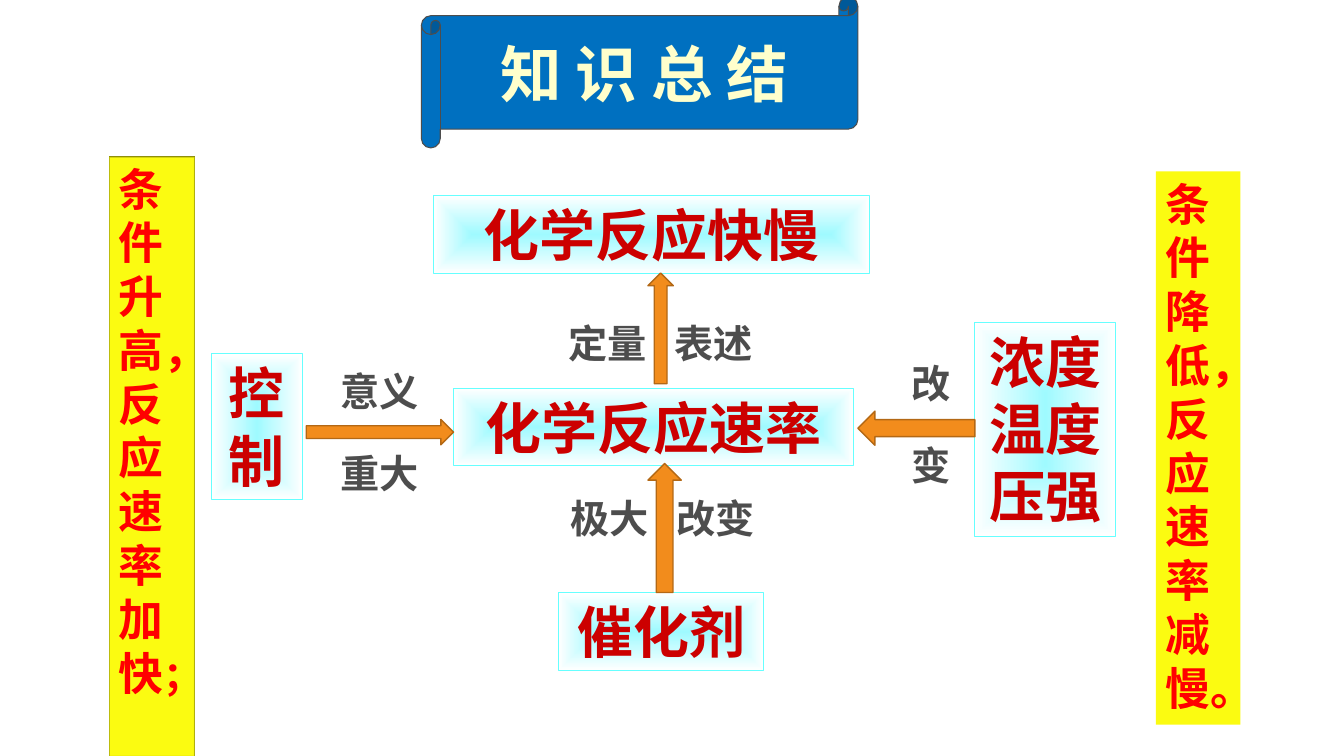
from dataclasses import dataclass
from typing import Optional

from lxml import etree
from pptx import Presentation
from pptx.dml.color import RGBColor
from pptx.enum import shapes, text
from pptx.oxml import ns
from pptx.util import Cm, Pt

FONT = "Noto Sans CJK SC"
BLUE = RGBColor(0x00, 0x70, 0xC0)
CREAM = RGBColor(0xFF, 0xFF, 0xCC)
GREY = RGBColor(0x4D, 0x4D, 0x4D)
AQUA = RGBColor(0x9F, 0xFA, 0xFF)
AQUA_EDGE = RGBColor(0x66, 0xFF, 0xFF)
WHITE = RGBColor(0xFF, 0xFF, 0xFF)
DARK_RED = RGBColor(0xCC, 0x00, 0x00)
RED = RGBColor(0xFF, 0x00, 0x00)
YELLOW = RGBColor(0xFB, 0xFB, 0x11)
OLIVE = RGBColor(0x83, 0x83, 0x09)
ORANGE = RGBColor(0xF2, 0x8C, 0x1C)
BROWN = RGBColor(0xB3, 0x68, 0x15)
PRESET = shapes.MSO_SHAPE
ALIGN = text.PP_ALIGN


@dataclass
class Frame:
    left: float
    top: float
    width: float
    height: float

    def lengths(self):
        return [Cm(value) for value in (self.left, self.top, self.width, self.height)]


@dataclass
class Style:
    size: float
    color: RGBColor
    align: text.PP_ALIGN = ALIGN.LEFT
    space_before: float = 0


@dataclass
class Gradient:
    inner: RGBColor
    outer: RGBColor
    inner_position: float = 0


@dataclass
class Concept:
    frame: Frame
    lines: list[str]


@dataclass
class Arrow:
    preset: shapes.MSO_SHAPE
    frame: Frame


@dataclass
class Condition:
    frame: Frame
    runs: list[tuple[str, float]]
    fill: RGBColor | Gradient


TITLE = Style(44, CREAM, ALIGN.CENTER)
CONCEPT = Style(40, DARK_RED, ALIGN.CENTER)
LABEL = Style(28, GREY, space_before=25)
CONDITION = Style(32, RED)
GLOW = Gradient(AQUA, WHITE)

CONCEPTS = [
    Concept(Frame(5.33, 8.92, 2.29, 3.68), ["控制"]),
    Concept(Frame(11.43, 9.78, 10.08, 1.96), ["化学反应速率"]),
    Concept(Frame(10.92, 4.93, 11, 1.96), ["化学反应快慢"]),
    Concept(Frame(24.56, 8.13, 3.56, 5.38), ["浓度", "温度", "压强"]),
    Concept(Frame(14.07, 14.94, 5.18, 1.96), ["催化剂"]),
]
ARROWS = [
    Arrow(PRESET.UP_ARROW, Frame(16.33, 6.88, 0.64, 2.79)),
    Arrow(PRESET.UP_ARROW, Frame(16.33, 11.68, 0.84, 3.25)),
    Arrow(PRESET.LEFT_ARROW, Frame(21.62, 10.36, 2.95, 0.86)),
    Arrow(PRESET.RIGHT_ARROW, Frame(7.72, 10.57, 3.71, 0.64)),
]
LABELS = [
    Concept(Frame(14.07, 7.92, 2.6, 1.45), ["定量"]),
    Concept(Frame(16.74, 7.92, 2.6, 1.45), ["表述"]),
    Concept(Frame(14.12, 12.32, 2.6, 1.45), ["极大"]),
    Concept(Frame(16.79, 12.32, 2.6, 1.45), ["改变"]),
    Concept(Frame(8.33, 9.14, 3.78, 3.51), ["意义", "重大"]),
    Concept(Frame(22.73, 8.94, 2.51, 3.51), ["改", "变"]),
]
CONDITIONS = [
    Condition(Frame(2.74, 3.94, 2.18, 15.14),
              [("条件升高，反应速率加快", 32), ("；", 28)], Gradient(YELLOW, OLIVE, 0.96)),
    Condition(Frame(29.13, 4.32, 2.13, 13.94),
              [("条件降低，反应速率减慢。", 32)], YELLOW),
]


def paint(shape, fill: RGBColor | Gradient) -> None:
    if not isinstance(fill, Gradient):
        shape.fill.solid()
        shape.fill.fore_color.rgb = fill
        return
    shape.fill.gradient()
    colors = [(fill.inner, fill.inner_position), (fill.outer, 1)]
    for stop, (color, position) in zip(shape.fill.gradient_stops, colors):
        stop.color.rgb = color
        stop.position = position
    gradient = shape._element.spPr.find(ns.qn("a:gradFill"))
    linear = gradient.find(ns.qn("a:lin"))
    radial = etree.Element(ns.qn("a:path"), {"path": "shape"})
    etree.SubElement(radial, ns.qn("a:fillToRect"), dict.fromkeys("ltrb", "50000"))
    gradient.replace(linear, radial)


def add_panel(slide, preset: shapes.MSO_SHAPE, frame: Frame, fill: RGBColor | Gradient,
              edge: Optional[RGBColor] = None, edge_width: float = 0.75):
    shape = slide.shapes.add_shape(preset, *frame.lengths())
    shape.shadow.inherit = False
    paint(shape, fill)
    if edge is None:
        shape.line.fill.background()
    else:
        shape.line.color.rgb = edge
        shape.line.width = Pt(edge_width)
    return shape


def write(shape, paragraphs: list[list[tuple[str, float]]], style: Style,
          anchor=text.MSO_ANCHOR.TOP, wrap: bool = True) -> None:
    text_frame = shape.text_frame
    fit = text.MSO_AUTO_SIZE.SHAPE_TO_FIT_TEXT if wrap else text.MSO_AUTO_SIZE.NONE
    frame_format = {"word_wrap": wrap, "vertical_anchor": anchor, "auto_size": fit}
    for name, value in frame_format.items():
        setattr(text_frame, name, value)
    for index, runs in enumerate(paragraphs):
        paragraph = text_frame.add_paragraph() if index else text_frame.paragraphs[0]
        paragraph.alignment = style.align
        if index:
            paragraph.space_before = Pt(style.space_before)
        for words, size in runs:
            run = paragraph.add_run()
            run.text = words
            run.font.color.rgb = style.color
            for name, value in {"name": FONT, "size": Pt(size), "bold": True}.items():
                setattr(run.font, name, value)
            properties = run._r.get_or_add_rPr()
            etree.SubElement(properties, ns.qn("a:ea"), {"typeface": FONT})


def plain(lines: list[str], style: Style) -> list[list[tuple[str, float]]]:
    return [[(line, style.size)] for line in lines]


def main() -> None:
    presentation = Presentation()
    presentation.slide_width = Cm(33.87)
    presentation.slide_height = Cm(19.05)
    slide = presentation.slides.add_slide(presentation.slide_layouts[6])

    scroll = add_panel(slide, PRESET.HORIZONTAL_SCROLL, Frame(10.62, -0.08, 11, 3.81), BLUE, GREY)
    write(scroll, plain(["知 识 总 结"], TITLE), TITLE, text.MSO_ANCHOR.MIDDLE, wrap=False)
    for concept in CONCEPTS:
        box = add_panel(slide, PRESET.RECTANGLE, concept.frame, GLOW, AQUA_EDGE)
        write(box, plain(concept.lines, CONCEPT), CONCEPT)
    for arrow in ARROWS:
        add_panel(slide, arrow.preset, arrow.frame, ORANGE, BROWN, 1)
    for label in LABELS:
        box = slide.shapes.add_textbox(*label.frame.lengths())
        write(box, plain(label.lines, LABEL), LABEL)
    for condition in CONDITIONS:
        column = add_panel(slide, PRESET.RECTANGLE, condition.frame, condition.fill)
        write(column, [condition.runs], CONDITION)
    presentation.save("out.pptx")


if __name__ == "__main__":
    main()
